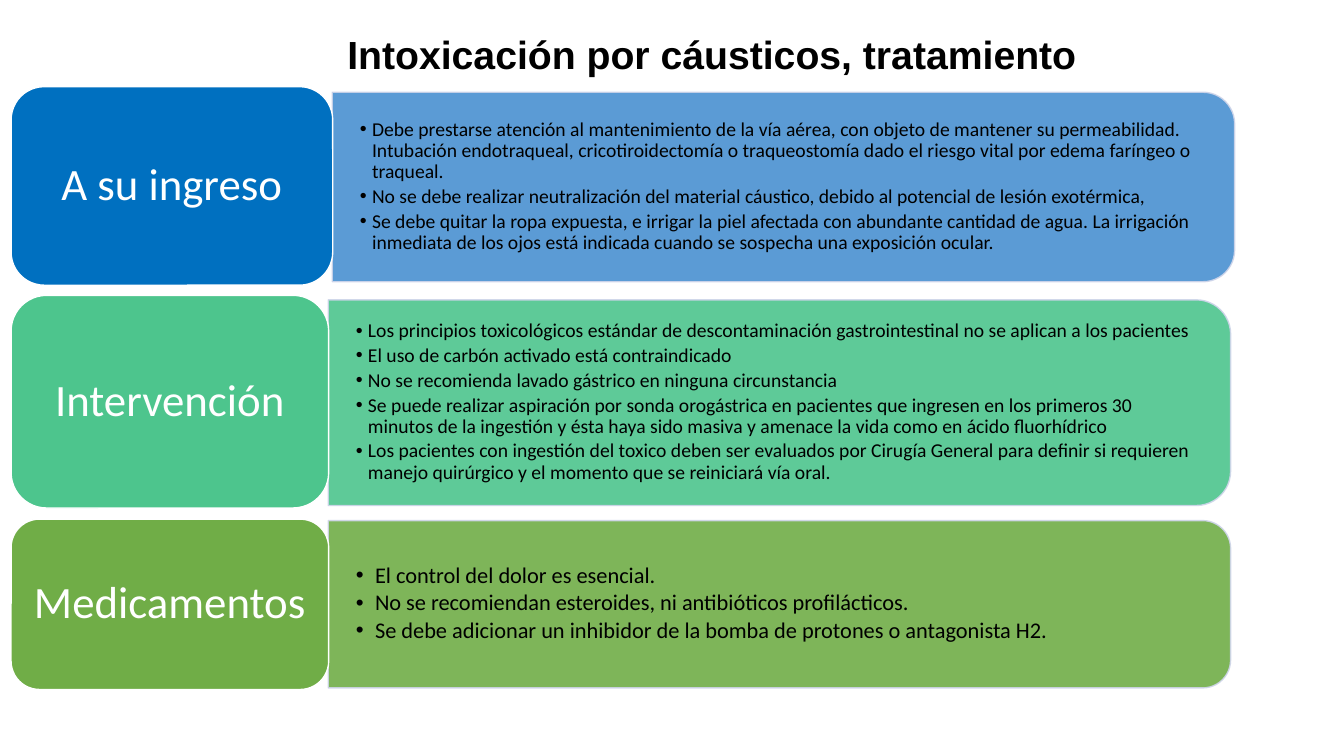
from lxml.etree import SubElement
from pptx import Presentation
from pptx.dml.color import RGBColor
from pptx.enum.shapes import MSO_SHAPE as Shape
from pptx.enum.text import MSO_ANCHOR as Anchor, MSO_AUTO_SIZE as AutoSize, PP_ALIGN as Align
from pptx.oxml.ns import qn
from pptx.util import Pt

PX = 9144  # one px is a hundredth of an inch
THEME = {
    "black": RGBColor.from_string("000000"),
    "white": RGBColor.from_string("FFFFFF"),
    "edge": RGBColor.from_string("CFD5EA"),
    "blue": RGBColor.from_string("0070C0"),
    "light_blue": RGBColor.from_string("5B9BD5"),
    "mint": RGBColor.from_string("4DC58D"),
    "green": RGBColor.from_string("70AD47"),
    "title_font": "Arial", "body_font": "Calibri",
    "title_size": 28, "label_size": 32, "list_size": 14, "large_list_size": 16,
}


def write_text(frame, lines, size, color, font=THEME["body_font"], bold=False,
               align=Align.CENTER, margins=(10, 5), hanging=0, gap=0):
    """Fill a text frame; a hanging indent in px turns the lines into bullets."""
    frame.word_wrap = True
    frame.auto_size = AutoSize.NONE
    frame.vertical_anchor = Anchor.MIDDLE
    frame.margin_left = frame.margin_right = margins[0] * PX
    frame.margin_top = frame.margin_bottom = margins[1] * PX
    for index, line in enumerate(lines):
        paragraph = frame.add_paragraph() if index else frame.paragraphs[0]
        if hanging:
            paragraph.level = 1
            properties = paragraph._p.get_or_add_pPr()
            properties.set("marL", str(hanging * PX))
            properties.set("indent", str(-hanging * PX))
            SubElement(properties, qn("a:buFont"), typeface="Arial")
            SubElement(properties, qn("a:buChar"), char="•")
        paragraph.text = line
        paragraph.alignment = align
        paragraph.line_spacing = 0.9
        paragraph.space_before = Pt(0)
        paragraph.space_after = Pt(gap)
        paragraph.font.name = font
        paragraph.font.size = Pt(size)
        paragraph.font.bold = bold
        paragraph.font.color.rgb = color


def add_block(slide, kind, left, top, width, height, fill, line):
    """Add a filled preset shape with a thin outline."""
    shape = slide.shapes.add_shape(kind, left * PX, top * PX, width * PX, height * PX)
    shape.shadow.inherit = False
    shape.fill.solid()
    shape.fill.fore_color.rgb = fill
    shape.line.color.rgb = line
    shape.line.width = Pt(1)
    return shape


presentation = Presentation()
presentation.slide_width = 1333 * PX
presentation.slide_height = 750 * PX
slide = presentation.slides.add_slide(presentation.slide_layouts[5])

# Title
title = slide.shapes.title
title.left, title.top, title.width, title.height = (n * PX for n in (131, 10, 1150, 93))
write_text(title.text_frame, ["Intoxicación por cáusticos, tratamiento"],
           THEME["title_size"], THEME["black"], font=THEME["title_font"], bold=True)

# Stages: label, label box (top, width, height), panel (top, height), colours, list format, items
stages = [
    ("A su ingreso", (86, 319, 197), (91, 188), "blue", "light_blue", "list_size", 12, [
        "Debe prestarse atención al mantenimiento de la vía aérea, con objeto de mantener su "
        "permeabilidad. Intubación endotraqueal, cricotiroidectomía o traqueostomía dado el "
        "riesgo vital por edema faríngeo o traqueal.",
        "No se debe realizar neutralización del material cáustico, debido al potencial de "
        "lesión exotérmica,",
        "Se debe quitar la ropa expuesta, e irrigar la piel afectada con abundante cantidad de "
        "agua. La irrigación inmediata de los ojos está indicada cuando se sospecha una "
        "exposición ocular.",
    ]),
    ("Intervención", (293, 315, 211), (297, 204), "mint", "mint", "list_size", 12, [
        "Los principios toxicológicos estándar de descontaminación gastrointestinal no se "
        "aplican a los pacientes",
        "El uso de carbón activado está contraindicado",
        "No se recomienda lavado gástrico en ninguna circunstancia",
        "Se puede realizar aspiración por sonda orogástrica en pacientes que ingresen en los "
        "primeros 30 minutos de la ingestión y ésta haya sido masiva y amenace la vida como "
        "en ácido fluorhídrico",
        "Los pacientes con ingestión del toxico deben ser evaluados por Cirugía General para "
        "definir si requieren manejo quirúrgico y el momento que se reiniciará vía oral.",
    ]),
    ("Medicamentos", (515, 315, 169), (516, 166), "green", "green", "large_list_size", 19, [
        "El control del dolor es esencial.",
        "No se recomiendan esteroides, ni antibióticos profilácticos.",
        "Se debe adicionar un inhibidor de la bomba de protones o antagonista H2.",
    ]),
]
LABEL_LEFT, PANEL_WIDTH = 11, 895

for (label, (label_top, label_width, label_height), (panel_top, panel_height),
     label_color, panel_color, list_size, hanging, items) in stages:
    panel_left = LABEL_LEFT + label_width

    # Panel: a quarter turn puts the two rounded corners on the right
    shift = (PANEL_WIDTH - panel_height) // 2
    panel = add_block(slide, Shape.ROUND_2_SAME_RECTANGLE, panel_left + shift,
                      panel_top - shift, panel_height, PANEL_WIDTH,
                      THEME[panel_color], THEME["edge"])
    panel.rotation = 90
    for color in panel.element.spPr.iter(qn("a:srgbClr")):
        if panel_color != "light_blue" or color.get("val") == str(THEME["edge"]):
            SubElement(color, qn("a:alpha"), val="90000")

    # List, upright over the turned panel
    list_box = slide.shapes.add_textbox(panel_left * PX, panel_top * PX,
                                        (PANEL_WIDTH - 9) * PX, panel_height * PX)
    write_text(list_box.text_frame, items, THEME[list_size], THEME["black"],
               align=Align.LEFT, margins=(27, 14), hanging=hanging, gap=2.5)

    # Label
    label_box = add_block(slide, Shape.ROUNDED_RECTANGLE, LABEL_LEFT, label_top,
                          label_width, label_height, THEME[label_color], THEME["white"])
    write_text(label_box.text_frame, [label], THEME["label_size"], THEME["white"],
               margins=(13, 7))

presentation.save("out.pptx")
